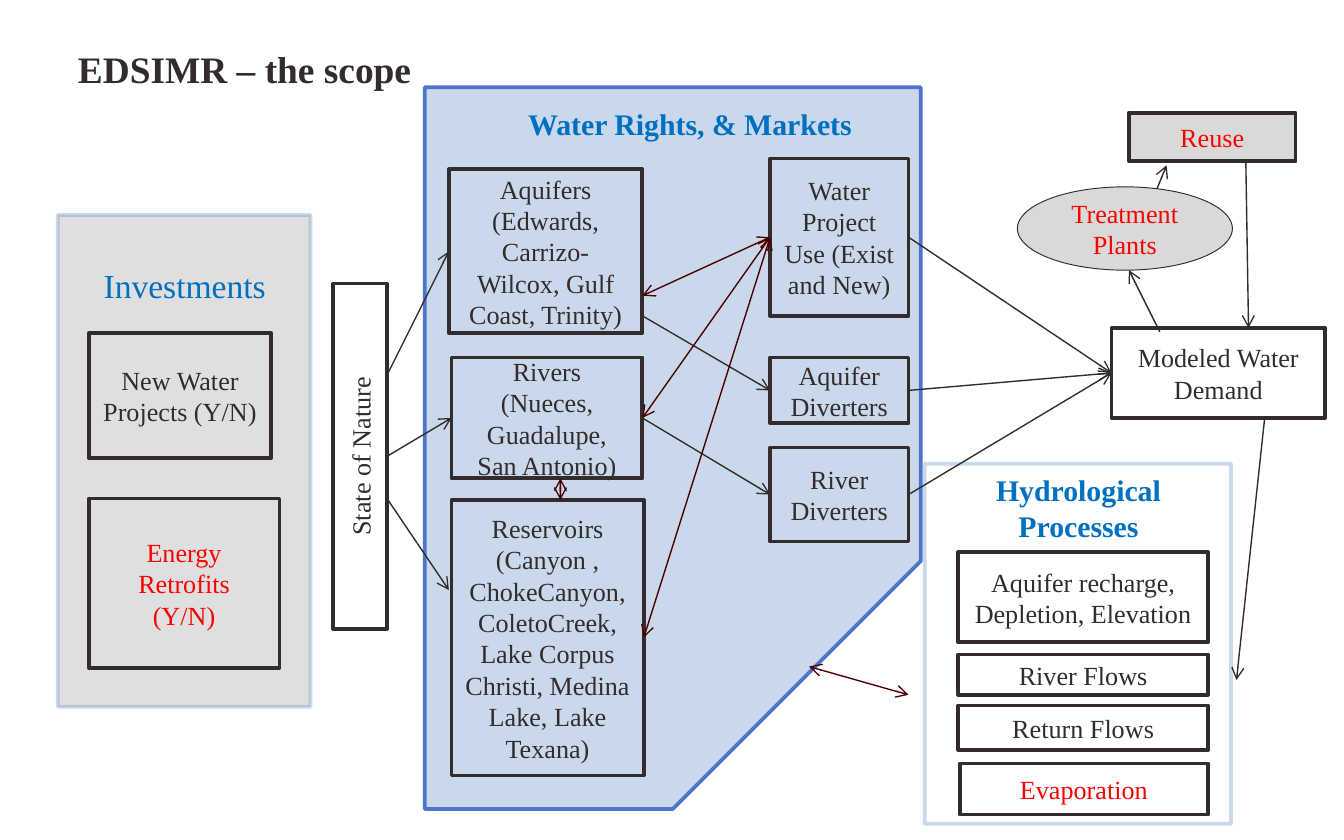
"""Build the EDSIMR scope diagram slide."""
from lxml import etree
from pptx import Presentation
from pptx.dml.color import RGBColor
from pptx.enum import shapes, text
from pptx.oxml.ns import qn
from pptx.util import Emu, Pt

PX = 9144
FONT = "Times New Roman"
INK, RED, BLUE, MAROON = "332C2C", "FF0000", "0070C0", "4E0000"
STEEL, ROYAL, GRAY, SILVER = "4F81BD", "4E75CB", "9B9696", "D9D9D9"
RECTANGLE = shapes.MSO_SHAPE.RECTANGLE
OVAL = shapes.MSO_SHAPE.OVAL
TOP, LEFT, BOTTOM, RIGHT = range(4)

# left, top, width, height, fill, line, line opacity in percent
PANELS = [
    (688, 345, 228, 268, None, STEEL, 30),
    (43, 160, 188, 366, GRAY, STEEL, 30),
]
MARKET_PANEL = (232, 149, 537, 369, STEEL, ROYAL, 100)

BOXES = {
    "state": ((248, 211, 40, 257), ["State of Nature"], INK),
    "aquifers": ((334, 126, 144, 122),
                 ["Aquifers", "(Edwards, Carrizo-Wilcox, Gulf Coast, Trinity)"], INK),
    "rivers": ((336, 266, 142, 90), ["Rivers (Nueces, Guadalupe, San Antonio)"], INK),
    "reservoirs": ((336, 372, 143, 205),
                   ["Reservoirs (Canyon , ChokeCanyon, ColetoCreek, Lake Corpus Christi, "
                    "Medina Lake, Lake Texana)"], INK),
    "aquifer diverters": ((573, 266, 103, 49), ["Aquifer Diverters"], INK),
    "river diverters": ((573, 333, 103, 70), ["River Diverters"], INK),
    "return flows": ((713, 525, 186, 33), ["Return Flows"], INK),
    "evaporation": ((714, 568, 185, 38), ["Evaporation"], RED),
    "recharge": ((713, 411, 186, 67), ["Aquifer recharge, Depletion, Elevation"], INK),
    "river flows": ((713, 487, 186, 30), ["River Flows"], INK),
    "project use": ((573, 118, 103, 117), ["Water Project Use (Exist and New)"], INK),
    "new projects": ((66, 248, 136, 93), ["New Water Projects (Y/N)"], INK),
    "retrofits": ((66, 371, 142, 126), ["Energy Retrofits", "(Y/N)"], RED),
    "demand": ((827, 244, 159, 67), ["Modeled Water Demand"], INK),
    "reuse": ((840, 84, 124, 36), ["Reuse"], RED),
    "treatment": ((757, 139, 160, 62), ["Treatment Plants"], RED),
}
FILLED = {"reuse", "treatment"}

HEADINGS = [
    ((338, 66, 351, 52), "Water Rights, & Markets", 16, True),
    ((719, 350, 167, 56), "Hydrological Processes", 16, True),
    ((44, 189, 187, 46), "Investments", 18, False),
]
TITLE = ((50, 30, 266, 42), "EDSIMR – the scope", 20)

# An end is either an (x, y) point or a (box, side) pair.
REUSE_ARROWS = [((859, 145), (868, 123)), ((863, 247), (840, 201))]
FLOW_ARROWS = [
    ((288, 279), ("aquifers", LEFT)),
    (("state", RIGHT), ("rivers", LEFT)),
    ((288, 371), (334, 439)),
    ((478, 235), ("aquifer diverters", LEFT)),
    (("rivers", RIGHT), ("river diverters", LEFT)),
    (("project use", RIGHT), ("demand", LEFT)),
    (("aquifer diverters", RIGHT), ("demand", LEFT)),
    (("river diverters", RIGHT), ("demand", LEFT)),
    ((941, 311), (920, 506)),
    ((927, 121), (929, 244)),
]
EXCHANGE_ARROWS = [
    ((417, 356), (417, 372)),
    (("project use", LEFT), ("reservoirs", RIGHT)),
    ((478, 220), ("project use", LEFT)),
    (("rivers", RIGHT), ("project use", LEFT)),
    ((602, 496), (676, 517)),
]


def rgb(value):
    return RGBColor.from_string(value)


def scaled(lengths):
    return [Emu(round(length * PX)) for length in lengths]


def set_opacity(paint, percent):
    """Make the solid colour inside a fill or line element see-through."""
    color = next(paint.iter(qn("a:srgbClr")))
    etree.SubElement(color, qn("a:alpha"), val=str(percent * 1000))


def add_outlined(kind, frame, fill, line, weight):
    shape = slide.shapes.add_shape(kind, *scaled(frame))
    shape.shadow.inherit = False
    if fill:
        shape.fill.solid()
        shape.fill.fore_color.rgb = rgb(fill)
    else:
        shape.fill.background()
    shape.line.color.rgb = rgb(line)
    shape.line.width = Pt(weight)
    return shape


def add_panel(kind, panel):
    *frame, fill, line, opacity = panel
    shape = add_outlined(kind, frame, fill, line, 2)
    properties = shape._element.spPr
    if fill:
        set_opacity(properties.find(qn("a:solidFill")), 30)
    if opacity < 100:
        set_opacity(properties.find(qn("a:ln")), opacity)
    return shape


def write(shape, lines, size, color, bold=False, align=text.PP_ALIGN.CENTER):
    frame = shape.text_frame
    frame.word_wrap = True
    frame.vertical_anchor = text.MSO_ANCHOR.MIDDLE
    for index, line in enumerate(lines):
        paragraph = frame.add_paragraph() if index else frame.paragraphs[0]
        paragraph.alignment = align
        run = paragraph.add_run()
        run.text = line
        run.font.name, run.font.size, run.font.bold = FONT, Pt(size), bold
        run.font.color.rgb = rgb(color)
    return frame


def locate(end):
    """Return the position of a point or of the middle of a box side."""
    if end[0] not in BOXES:
        return end
    left, top, width, height = BOXES[end[0]][0]
    across, down = {TOP: (0.5, 0), LEFT: (0, 0.5), BOTTOM: (0.5, 1), RIGHT: (1, 0.5)}[end[1]]
    return left + across * width, top + down * height


def add_arrow(start, finish, color, heads=("tailEnd",)):
    connector = slide.shapes.add_connector(
        shapes.MSO_CONNECTOR.STRAIGHT, *scaled((*locate(start), *locate(finish))))
    connector.line.color.rgb = rgb(color)
    connector.line.width = Pt(0.75)
    for head in heads:
        etree.SubElement(connector.line._get_or_add_ln(), qn(f"a:{head}"), type="arrow")
    etree.SubElement(connector._element.spPr, qn("a:effectLst"))
    for end, join in ((start, connector.begin_connect), (finish, connector.end_connect)):
        if end[0] in BOXES:
            join(boxes[end[0]], end[1])


presentation = Presentation()
presentation.slide_width, presentation.slide_height = scaled((1000, 625))
slide = presentation.slides.add_slide(presentation.slide_layouts[6])

for ends in REUSE_ARROWS:
    add_arrow(*ends, INK)
for panel in PANELS:
    add_panel(RECTANGLE, panel)
market = add_panel(shapes.MSO_SHAPE.SNIP_1_RECTANGLE, MARKET_PANEL)
market.adjustments[0] = 0.5
market.rotation = 90

boxes = {}
for name, (frame, lines, color) in BOXES.items():
    oval = name == "treatment"
    boxes[name] = add_outlined(OVAL if oval else RECTANGLE, frame,
                               SILVER if name in FILLED else None, INK, 0.5 if oval else 2)
    write(boxes[name], lines, 14, color)
boxes["state"].text_frame._txBody.bodyPr.set("vert", "vert270")

for frame, heading, size, bold in HEADINGS:
    write(slide.shapes.add_textbox(*scaled(frame)), [heading], size, BLUE, bold)
for ends in FLOW_ARROWS:
    add_arrow(*ends, INK)
for ends in EXCHANGE_ARROWS:
    add_arrow(*ends, MAROON, ("headEnd", "tailEnd"))

frame, heading, size = TITLE
title = write(slide.shapes.add_textbox(*scaled(frame)), [heading], size, INK, True,
              text.PP_ALIGN.LEFT)
title.word_wrap = False
title.auto_size = text.MSO_AUTO_SIZE.SHAPE_TO_FIT_TEXT
title.vertical_anchor = text.MSO_ANCHOR.TOP
title.margin_left = title.margin_right = Emu(8 * PX)
title.margin_top = title.margin_bottom = Emu(4 * PX)

presentation.save("out.pptx")
